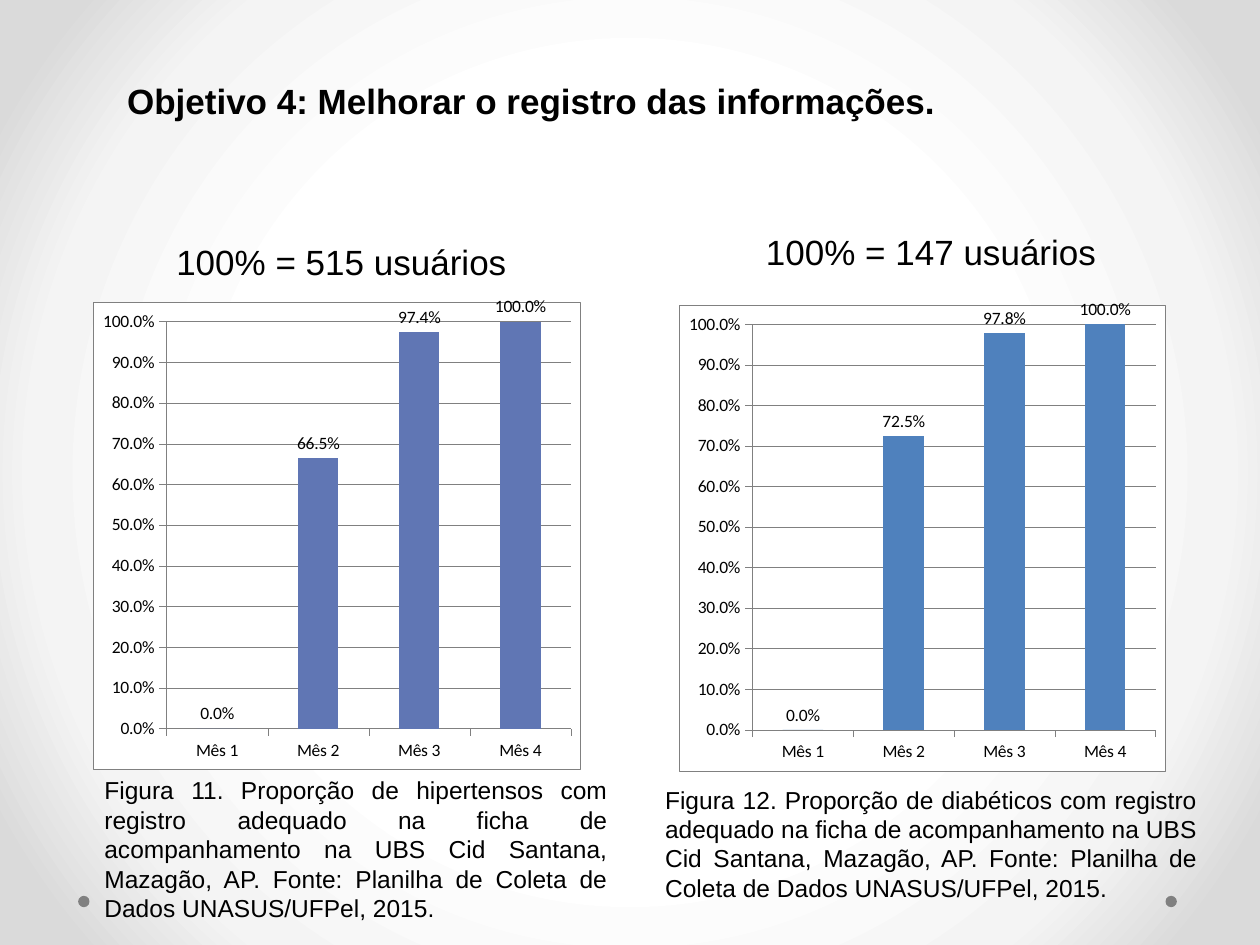
from dataclasses import dataclass

from lxml import etree
from pptx import Presentation
from pptx.chart.data import CategoryChartData
from pptx.dml.color import RGBColor
from pptx.enum.chart import XL_CHART_TYPE as ChartType
from pptx.enum.chart import XL_LABEL_POSITION as LabelPos
from pptx.enum.chart import XL_TICK_MARK as Tick
from pptx.enum.shapes import MSO_SHAPE as Shape
from pptx.enum.text import MSO_ANCHOR as Anchor
from pptx.enum.text import PP_ALIGN as Align
from pptx.oxml.ns import qn
from pptx.oxml.xmlchemy import OxmlElement
from pptx.util import Inches, Pt

BLACK = RGBColor(0x00, 0x00, 0x00)
WHITE = RGBColor(0xFF, 0xFF, 0xFF)
GREY = RGBColor(0x80, 0x80, 0x80)
INDIGO = RGBColor(0x60, 0x76, 0xB4)
BLUE = RGBColor(0x4F, 0x81, 0xBD)
GLOW = [(0, "FFFFFF"), (50, "FFFFFF"), (76, "F4F4F4"), (92, "DADADA"), (100, "DADADA")]

MONTHS = ["Mês 1", "Mês 2", "Mês 3", "Mês 4"]
PERCENT = "0.0%"
Box = tuple[float, float, float, float]


@dataclass
class Panel:
    heading: str
    heading_box: Box
    chart_box: Box
    values: list[float]
    color: RGBColor
    caption: str
    caption_box: Box


def caption(number: int, group: str) -> str:
    return (f"Figura {number}. Proporção de {group} com registro adequado na ficha de "
            "acompanhamento na UBS Cid Santana, Mazagão, AP. "
            "Fonte: Planilha de Coleta de Dados UNASUS/UFPel, 2015.")


PANELS = [
    Panel("100% = 515 usuários", (0.5, 1.86, 4.42, 0.43), (0.74, 2.36, 3.87, 3.75),
          [0, 0.665, 0.974, 1], INDIGO,
          caption(11, "hipertensos"), (0.73, 6.27, 4.19, 1.1)),
    Panel("100% = 147 usuários", (5.18, 1.78, 4.42, 0.43), (5.39, 2.38, 3.86, 3.74),
          [0, 0.725, 0.978, 1], BLUE,
          caption(12, "diabéticos"), (5.18, 6.11, 4.42, 1.1)),
]


def inches(box: Box) -> list[Inches]:
    return [Inches(v) for v in box]


def add_background(s) -> None:
    s.background.fill.gradient()
    grad = s._element.find(".//" + qn("a:gradFill"))
    for child in list(grad):
        grad.remove(child)
    stops = etree.SubElement(grad, qn("a:gsLst"))
    for pos, color in GLOW:
        gs = etree.SubElement(stops, qn("a:gs"), pos=str(pos * 1000))
        etree.SubElement(gs, qn("a:srgbClr"), val=color)
    circle = etree.SubElement(grad, qn("a:path"), path="circle")
    etree.SubElement(circle, qn("a:fillToRect"), l="50000", t="50000", r="50000", b="50000")


def add_dot(s, left: float) -> None:
    sp = s.shapes.add_shape(Shape.OVAL, *inches((left, 7.11, 0.09, 0.09)))
    sp.shadow.inherit = False
    sp.fill.solid()
    sp.fill.fore_color.rgb = GREY
    sp.line.fill.background()


def add_text(s, text: str, box: Box, size: int, align: Align,
             anchor: Anchor = Anchor.BOTTOM, bold: bool = False) -> None:
    tf = s.shapes.add_textbox(*inches(box)).text_frame
    tf.word_wrap = True
    tf.vertical_anchor = anchor
    p = tf.paragraphs[0]
    p.text = text
    p.alignment = align
    p.font.name = "Arial"
    p.font.size = Pt(size)
    p.font.bold = bold
    p.font.color.rgb = BLACK


def thin_line(line) -> None:
    line.color.rgb = GREY
    line.width = Pt(0.25)


def fill_area(element, before: tuple[str, ...], border: bool) -> None:
    """White background for a chart part, with a thin grey border if wanted."""
    sp_pr = OxmlElement("c:spPr")
    fill = etree.SubElement(sp_pr, qn("a:solidFill"))
    etree.SubElement(fill, qn("a:srgbClr"), val=str(WHITE))
    ln = etree.SubElement(sp_pr, qn("a:ln"), w=str(Pt(0.25)))
    if border:
        ln_fill = etree.SubElement(ln, qn("a:solidFill"))
        etree.SubElement(ln_fill, qn("a:srgbClr"), val=str(GREY))
    else:
        etree.SubElement(ln, qn("a:noFill"))
    element.insert_element_before(sp_pr, *before)


def add_column_chart(s, panel: Panel) -> None:
    data = CategoryChartData(number_format=PERCENT)
    data.categories = MONTHS
    data.add_series("Series 1", panel.values)
    chart = s.shapes.add_chart(ChartType.COLUMN_CLUSTERED,
                               *inches(panel.chart_box), data).chart
    chart.has_legend = False
    chart.has_title = False
    chart.font.name = "Calibri"
    chart.font.size = Pt(10)
    chart.font.color.rgb = BLACK

    # Axes
    for axis in (chart.category_axis, chart.value_axis):
        axis.major_tick_mark = Tick.OUTSIDE
        axis.minor_tick_mark = Tick.NONE
        thin_line(axis.format.line)
    axis = chart.value_axis
    axis.minimum_scale, axis.maximum_scale, axis.major_unit = 0, 1, 0.1
    axis.tick_labels.number_format = PERCENT
    axis.tick_labels.number_format_is_linked = False
    thin_line(axis.major_gridlines.format.line)

    # Columns and labels
    plot = chart.plots[0]
    plot.gap_width = 150
    plot.vary_by_categories = False
    series = plot.series[0]
    series.format.fill.solid()
    series.format.fill.fore_color.rgb = panel.color
    labels = series.data_labels
    labels.show_value = True
    labels.number_format = PERCENT
    labels.number_format_is_linked = False
    labels.position = LabelPos.OUTSIDE_END

    # Chart and plot areas
    space = chart._chartSpace
    fill_area(space, ("c:txPr", "c:externalData"), border=True)
    fill_area(space.chart.plotArea, ("c:extLst",), border=False)


def main() -> None:
    prs = Presentation()
    prs.slide_width, prs.slide_height = Inches(10), Inches(7.5)
    s = prs.slides.add_slide(prs.slide_layouts[6])

    # Backdrop
    add_background(s)
    for left in (0.62, 9.25):
        add_dot(s, left)

    # Title
    add_text(s, "Objetivo 4: Melhorar o registro das informações.",
             (0.91, 0.58, 9.29, 0.44), 20, Align.LEFT, Anchor.TOP, bold=True)

    # Chart panels
    for panel in PANELS:
        add_text(s, panel.heading, panel.heading_box, 20, Align.CENTER)
        add_text(s, panel.caption, panel.caption_box, 14, Align.JUSTIFY)
        add_column_chart(s, panel)

    prs.save("out.pptx")


if __name__ == "__main__":
    main()
